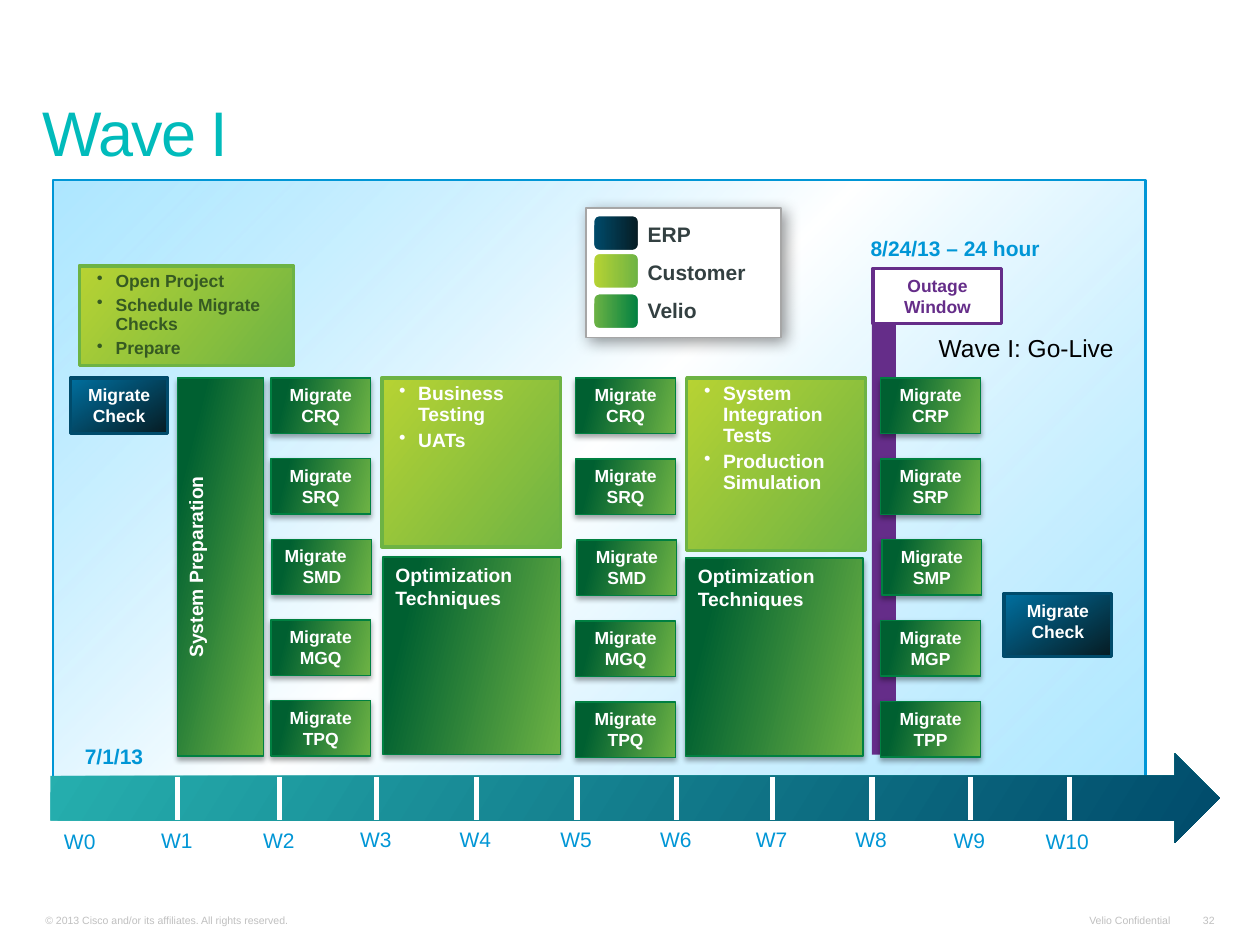
from lxml.etree import SubElement
from pptx import Presentation
from pptx.dml.color import RGBColor
from pptx.enum.shapes import MSO_CONNECTOR, MSO_SHAPE
from pptx.enum.text import MSO_ANCHOR, PP_ALIGN
from pptx.oxml import parse_xml
from pptx.oxml.ns import nsdecls, qn
from pptx.util import Inches, Pt

LEFT, CENTER, RIGHT = PP_ALIGN.LEFT, PP_ALIGN.CENTER, PP_ALIGN.RIGHT
BLUE, PURPLE, WHITE, GREY = "0096D6", "652D89", "FFFFFF", "C0C0C0"

# Styles: gradient is (stops, angle), stop is (position, colour, opacity)
LIME_STOPS = [(0, "B7D333", 100), (100, "6DB344", 100)]
SKY = ([(0, "89DCFF", 68), (47, WHITE, 100), (100, "89DCFF", 68)], 45)
TEAL = ([(0, "26AFAE", 100), (100, "004B6B", 100)], 32)
LIME = (LIME_STOPS, 39)
NAVY = ([(0, "0070A0", 100), (100, "061C23", 100)], 57)
GREEN = ([(16, "006031", 100), (100, "6DB344", 100)], 14)
SOFT_SHADOW = (35, 3.1, 1.8, 90)  # opacity, blur, distance, direction
LEGEND_SHADOW = (40, 8.8, 3, 45)
NAVY_STYLE = dict(fill=NAVY, line=("004B6B", 2))
LIME_STYLE = dict(fill=LIME, line=("6DB344", 2))
GREEN_STYLE = dict(fill=GREEN, line=("008041", 0.75), shadow=SOFT_SHADOW)

# Content
TITLE = "Wave I"
FOOTERS = [
    ("© 2013 Cisco and/or its affiliates. All rights reserved.", (0.27, 7.2, 3.74, 0.19), LEFT),
    ("Velio Confidential", (8.51, 7.2, 0.87, 0.19), RIGHT),
    ("32", (9.45, 7.2, 0.28, 0.19), RIGHT),
]
TICKS = [1.41, 2.22, 2.99, 3.78, 4.58, 5.37, 6.13, 6.92, 7.7, 8.49]
WEEK_TOPS = [6.53, 6.52, 6.52] + [6.51] * 6 + [6.52, 6.53]
ACTIVITIES = [
    (["Open Project", "Schedule Migrate Checks", "Prepare"], (0.63, 2.11, 1.7, 0.79), 10, "365A22"),
    (["Business Testing", "UATs"], (3.03, 3, 1.42, 1.34), 11, WHITE),
    (["System Integration Tests", "Production Simulation"], (5.45, 3, 1.42, 1.37), 11, WHITE),
]
CHECKS = [(0.56, 3, 0.77, 0.44), (7.97, 4.71, 0.85, 0.5)]
OPTIMIZATIONS = [(3.04, 4.42, 1.41, 1.57), (5.44, 4.43, 1.41, 1.57)]
MIGRATIONS = [  # left, row step, systems
    (2.15, 0.64, ["CRQ", "SRQ", "SMD", "MGQ", "TPQ"]),
    (4.57, 0.643, ["CRQ", "SRQ", "SMD", "MGQ", "TPQ"]),
    (6.99, 0.642, ["CRP", "SRP", "SMP", "MGP", "TPP"]),
]
DATES = [("7/1/13", (0.52, 5.9, 0.77, 0.2), CENTER),
         ("8/24/13 – 24 hour", (6.91, 1.87, 2.07, 0.2), LEFT)]
LEGEND = [  # label, swatch top, label width, stops
    ("ERP", 1.71, 0.68, [(0, "004B6B", 100), (100, "061C23", 100)]),
    ("Customer", 2.01, 0.9, LIME_STOPS),
    ("Velio", 2.33, 1.11, [(0, "6DB344", 100), (100, "008041", 100)]),
]


def color(value):
    return RGBColor.from_string(value)


def place(area):
    return [Inches(length) for length in area]


def set_fill(shape, fill):
    shape.fill.solid()
    if isinstance(fill, str):
        shape.fill.fore_color.rgb = color(fill)
        return
    stops, angle = fill
    stop_xml = "".join(
        f'<a:gs pos="{position * 1000}"><a:srgbClr val="{value}">'
        f'<a:alpha val="{opacity * 1000}"/></a:srgbClr></a:gs>'
        for position, value, opacity in stops)
    gradient = parse_xml(
        f'<a:gradFill {nsdecls("a")} rotWithShape="1"><a:gsLst>{stop_xml}</a:gsLst>'
        f'<a:lin ang="{angle * 60000}" scaled="0"/></a:gradFill>')
    properties = shape.element.spPr
    properties.replace(properties.find(qn("a:solidFill")), gradient)


def set_shadow(shape, shadow):
    opacity, blur, distance, direction = shadow
    effects = shape.element.spPr.find(qn("a:effectLst"))
    outer = SubElement(effects, qn("a:outerShdw"), blurRad=str(Pt(blur)), dist=str(Pt(distance)),
                       dir=str(direction * 60000), algn="ctr", rotWithShape="0")
    black = SubElement(outer, qn("a:srgbClr"), val="000000")
    SubElement(black, qn("a:alpha"), val=str(opacity * 1000))


def add_box(shapes, area, fill, line=None, shadow=None, kind=MSO_SHAPE.RECTANGLE):
    box = shapes.add_shape(kind, *place(area))
    box.shadow.inherit = False
    set_fill(box, fill)
    if line:
        box.line.color.rgb, box.line.width = color(line[0]), Pt(line[1])
    else:
        box.line.fill.background()
    if shadow:
        set_shadow(box, shadow)
    return box


def write(box, lines, size, ink, bold=False, align=LEFT, insets=(0.1, 0.05),
          anchor=MSO_ANCHOR.TOP, wrap=True, bullets=False):
    frame = box.text_frame
    frame.word_wrap, frame.vertical_anchor = wrap, anchor
    frame.margin_left = frame.margin_right = Inches(insets[0])
    frame.margin_top = frame.margin_bottom = Inches(insets[1])
    frame.text = "\n".join(lines)
    for para in frame.paragraphs:
        para.alignment = align
        if bullets:
            para.line_spacing, para.space_after = 0.9, Pt(3)
            properties = para._p.get_or_add_pPr()
            properties.set("marL", str(Inches(0.19)))
            properties.set("indent", str(Inches(-0.15)))
            SubElement(properties, qn("a:buChar"), char="•")
        font = para.font
        font.name, font.size, font.bold = "Arial", Pt(size), bold
        font.color.rgb = color(ink)
    return frame


def add_text(shapes, text, area, size, ink, **options):
    return write(shapes.add_textbox(*place(area)), [text], size, ink, **options)


def add_migrations(shapes, left, step, systems):
    for row, system in enumerate(systems):
        shift = 0.01 if row == 2 else 0
        box = add_box(shapes, (left + shift, 3 + row * step, 0.79, 0.44), **GREEN_STYLE)
        write(box, ["Migrate", system], 10, WHITE, bold=True, align=CENTER)
        if (left, row) == (2.15, 2):
            box.text_frame.paragraphs[0].alignment = LEFT


deck = Presentation()
deck.slide_width, deck.slide_height = Inches(10), Inches(7.5)
page = deck.slides.add_slide(deck.slide_layouts[5])
shapes = page.shapes

# Title
title = shapes.title
title.left, title.top, title.width, title.height = place((0.25, 0.47, 9.39, 0.92))
title_frame = write(title, [TITLE], 36, "01BBBB", insets=(0.09, 0.05), anchor=MSO_ANCHOR.BOTTOM)
title_frame.paragraphs[0].line_spacing = 0.8
title_frame.paragraphs[0].runs[0].font._element.set("spc", "-100")

# Footer
for text, area, align in FOOTERS:
    add_text(shapes, text, area, 6, GREY, align=align, insets=(0.09, 0.04),
             anchor=MSO_ANCHOR.BOTTOM, wrap=align == LEFT)

# Backdrop and timeline
backdrop = add_box(shapes, (0.42, 1.43, 8.67, 4.96), SKY, (BLUE, 1.5),
                   kind=MSO_SHAPE.ROUNDED_RECTANGLE)
backdrop.adjustments[0] = 0
add_box(shapes, (0.4, 5.98, 9.28, 0.71), TEAL, kind=MSO_SHAPE.RIGHT_ARROW)
for x in TICKS:
    tick = shapes.add_connector(MSO_CONNECTOR.STRAIGHT, *place((x, 6.17, x, 6.51)))
    tick.line.color.rgb, tick.line.width = color(WHITE), Pt(3)
    SubElement(tick.element.spPr, qn("a:effectLst"))
for week, (middle, top) in enumerate(zip([0.64] + TICKS, WEEK_TOPS)):
    width = 0.58 if week == 10 else 0.46
    add_text(shapes, f"W{week}", (middle - width / 2, top, width, 0.3), 12, BLUE)

# Activities and checks
for lines, area, size, ink in ACTIVITIES:
    write(add_box(shapes, area, **LIME_STYLE), lines, size, ink, bold=True, bullets=True)
for area in CHECKS:
    write(add_box(shapes, area, **NAVY_STYLE), ["Migrate Check"], 10, WHITE,
          bold=True, align=CENTER)
for area in OPTIMIZATIONS:
    write(add_box(shapes, area, **GREEN_STYLE), ["Optimization Techniques"], 11, WHITE, bold=True)
preparation = add_box(shapes, (1.41, 3, 0.68, 3), **GREEN_STYLE)
write(preparation, ["System Preparation"], 11, WHITE, bold=True, align=CENTER)
preparation.text_frame._txBody.bodyPr.set("vert", "vert270")

# Outage window, go-live and dates
outage = add_box(shapes, (6.93, 2.13, 1.02, 0.44), WHITE, (PURPLE, 2))
write(outage, ["Outage Window"], 10, PURPLE, bold=True, align=CENTER)
add_box(shapes, (6.92, 2.56, 0.19, 3.43), PURPLE)
add_text(shapes, "Wave I: Go-Live", (6.75, 2.59, 2.79, 0.34), 14, "000000", align=CENTER)
for text, area, align in DATES:
    add_text(shapes, text, area, 12, BLUE, bold=True, align=align, insets=(0, 0))

# Migration columns
for left, step, systems in MIGRATIONS:
    add_migrations(shapes, left, step, systems)

# Legend
legend = shapes.add_group_shape().shapes
add_box(legend, (4.65, 1.65, 1.55, 1.03), WHITE, ("A6A6A6", 1), LEGEND_SHADOW)
for row, (label, top, width, stops) in enumerate(LEGEND):
    add_box(legend, (4.71, top, 0.36, 0.28), (stops, 0), (WHITE, 1),
            kind=MSO_SHAPE.ROUNDED_RECTANGLE)
    add_text(legend, label, (5.14, 1.76 + 0.3 * row, width, 0.2), 12, "334041",
             bold=True, insets=(0, 0))

deck.save("out.pptx")
